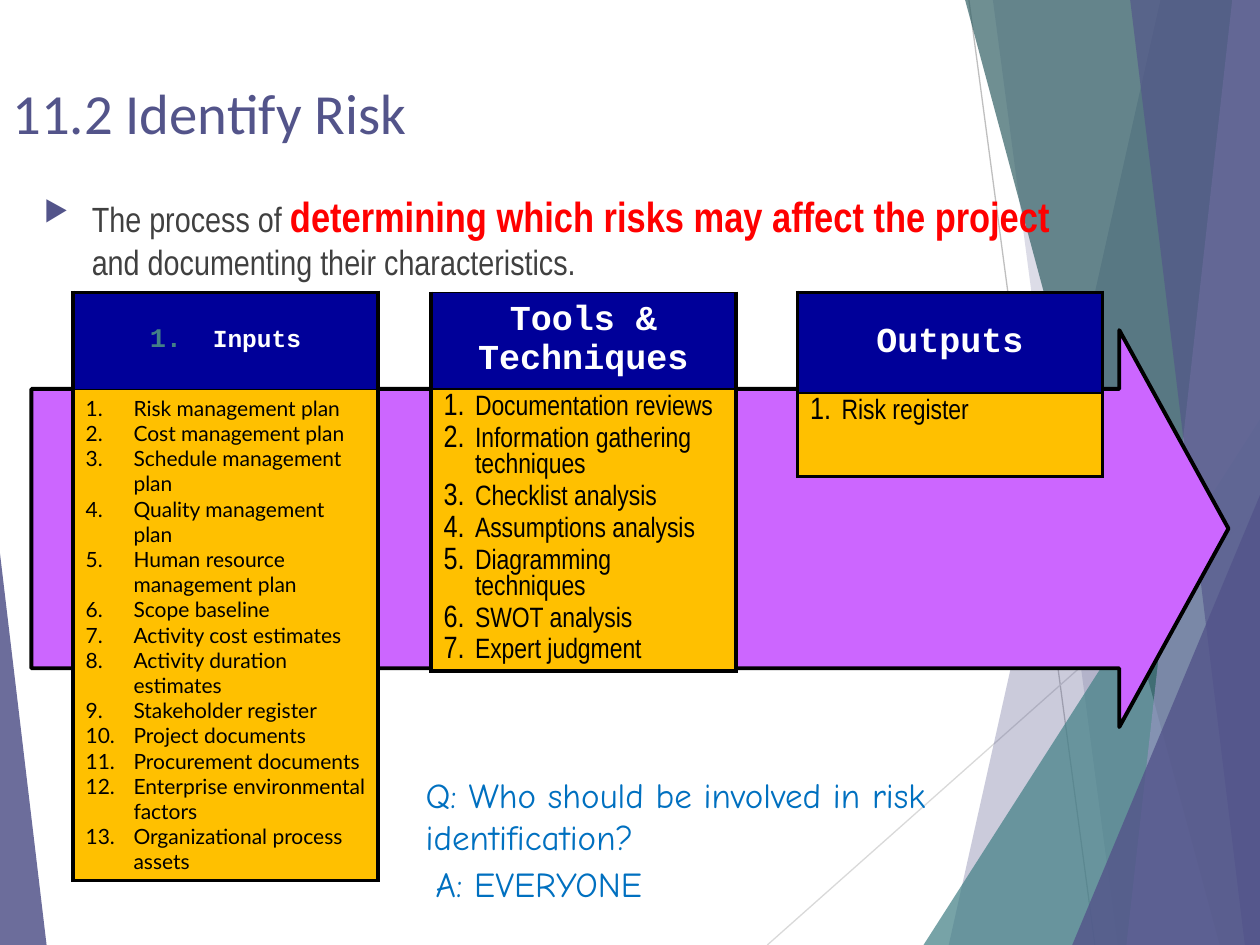
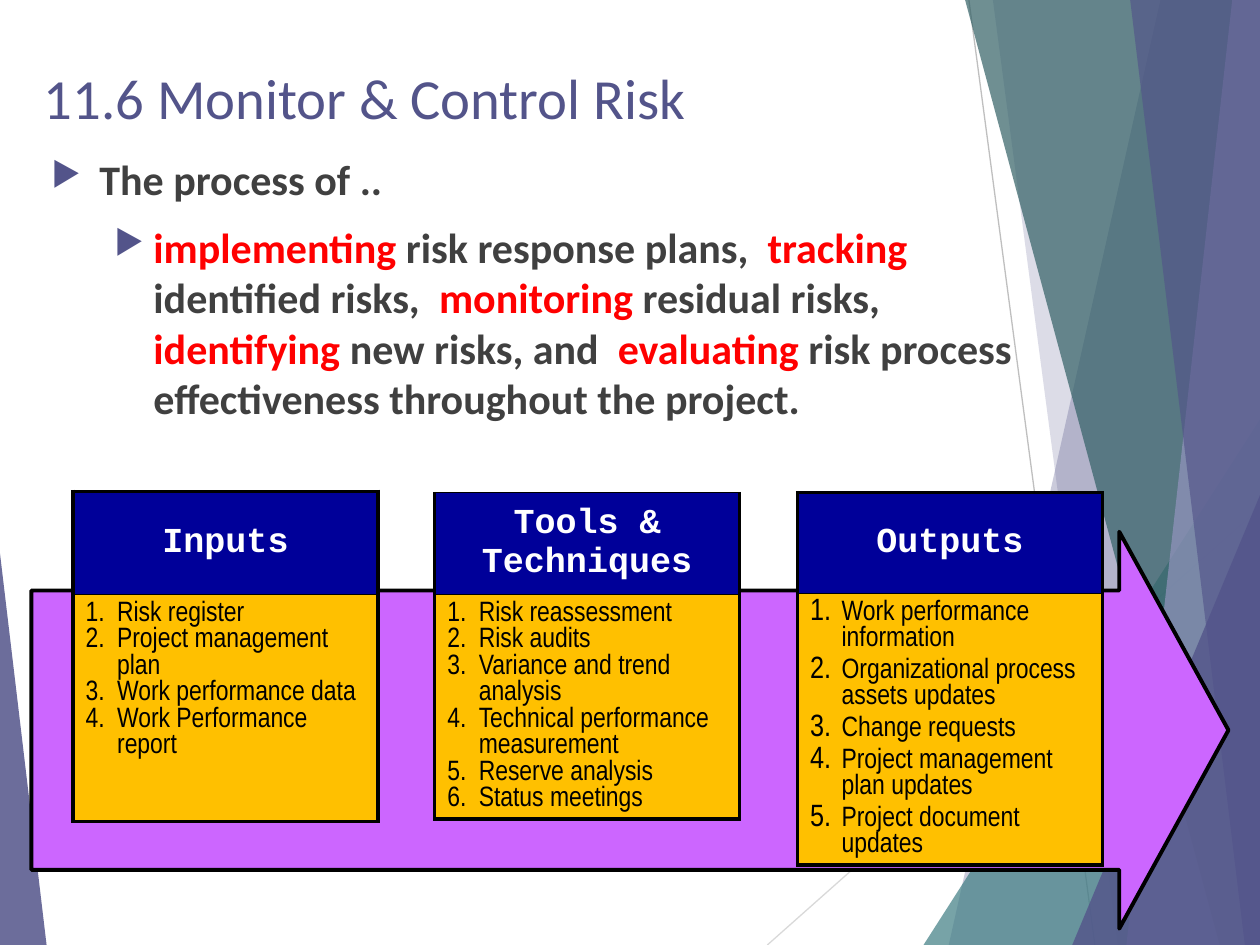
from lxml.etree import SubElement
from pptx import Presentation
from pptx.dml.color import RGBColor
from pptx.enum.shapes import MSO_CONNECTOR, MSO_SHAPE
from pptx.enum.text import MSO_ANCHOR, PP_ALIGN
from pptx.oxml.ns import qn
from pptx.util import Inches, Pt

# Colours
PLUM = RGBColor(0x53, 0x54, 0x8A)
LILAC = RGBColor(0x93, 0x94, 0xBE)
TEAL = RGBColor(0x43, 0x80, 0x86)
PINE = RGBColor(0x32, 0x60, 0x65)
SILVER = RGBColor(0xBF, 0xBF, 0xBF)
MIST = RGBColor(0xD9, 0xD9, 0xD9)
GREY = RGBColor(0x40, 0x40, 0x40)
RED = RGBColor(0xFF, 0x00, 0x00)
BLUE = RGBColor(0x00, 0x70, 0xC0)
NAVY = RGBColor(0x00, 0x00, 0x99)
GOLD = RGBColor(0xFF, 0xC0, 0x00)
VIOLET = RGBColor(0xCC, 0x66, 0xFF)
BLACK = RGBColor(0, 0, 0)
WHITE = RGBColor(0xFF, 0xFF, 0xFF)

# Text formats
TITLE = {"name": "Calibri", "size": Pt(32.4)}
PLAIN = {"name": "Arial Narrow", "size": Pt(20)}
STRONG = {"name": "Arial Narrow", "size": Pt(24), "bold": True}
BOLD = {"name": "Calibri", "size": Pt(24), "bold": True}
HEAD = {"name": "Courier New", "size": Pt(20), "bold": True}
SMALL = {"name": "Courier New", "size": Pt(14), "bold": True}
NARROW = {"name": "Arial Narrow", "size": Pt(16), "bold": False}
LATO = {"name": "Lato", "size": Pt(12), "bold": False}
COMIC = {"name": "Comic Neue", "size": Pt(20)}

# List formats: font, indent, space before, line height, number size
TIGHT = (NARROW, 0.25, 0, Pt(15.1), 100)
LOOSE = (NARROW, 0.25, 3, Pt(15.1), 110)
LONG = (LATO, 0.38, 0, 1.0, 100)

WIDE, HIGH = 10, 7.5
COL = 2.42


def write(par, *runs):
    """Add runs of (text, format, colour) to a paragraph."""
    for text, form, tint in runs:
        run = par.add_run()
        run.text = text
        for key, val in form.items():
            setattr(run.font, key, val)
        run.font.color.rgb = tint


def mark(par, left, hang, size, tint=None, char=None):
    """Give a paragraph a bullet, or a number when char is None."""
    props = par._p.get_or_add_pPr()
    props.set("marL", str(Inches(left)))
    props.set("indent", str(-Inches(hang)))
    if tint is not None:
        SubElement(SubElement(props, qn("a:buClr")), qn("a:srgbClr"), val=str(tint))
    SubElement(props, qn("a:buSzPct"), val=str(size * 1000))
    if char:
        SubElement(props, qn("a:buChar"), char=char)
    else:
        SubElement(props, qn("a:buAutoNum"), type="arabicPeriod")


deck = Presentation()
deck.slide_width, deck.slide_height = Inches(WIDE), Inches(HIGH)
blank = deck.slide_layouts[6]
pages = [deck.slides.add_slide(blank) for _ in range(2)]
draw = pages[0].shapes

# Shared backdrop: thin lines, then slabs and corner triangles, kept on the layout
decor = []
for x1, y1, x2, y2, tint in [(7.69, 0, 8.69, HIGH, SILVER), (WIDE, 4.03, 6.09, HIGH, MIST)]:
    ray = draw.add_connector(MSO_CONNECTOR.STRAIGHT, *map(Inches, (x1, y1, x2, y2)))
    ray.line.color.rgb, ray.line.width = tint, Pt(0.75)
    SubElement(ray._element.spPr, qn("a:effectLst"))
    decor.append(ray)

# Slab: top x, foot x. Corner: left, top, width, tip.
for kind, place, tint, alpha in [
    ("slab", (9.21, 7.53), PLUM, 30),
    ("slab", (7.88, 8.87), PLUM, 20),
    ("corner", (7.33, 3.33, 2.67, 1), TEAL, 72),
    ("slab", (7.66, 9.68), PINE, 70),
    ("slab", (9.78, 8.94), LILAC, 70),
    ("slab", (8.97, 9.88), PLUM, 65),
    ("corner", (8.51, 3.93, 1.49, 1), PLUM, 80),
    ("corner", (0, 4.39, 0.37, 0), PLUM, 85),
]:
    if kind == "slab":
        top, foot = place
        pen = draw.build_freeform(Inches(top), 0)
        pen.add_line_segments([(Inches(x), Inches(y)) for x, y in
                               [(WIDE, 0), (WIDE, HIGH), (foot, HIGH)]])
        shape = pen.convert_to_shape()
    else:
        left, top, width, tip = place
        shape = draw.add_shape(MSO_SHAPE.ISOSCELES_TRIANGLE,
                               *map(Inches, (left, top, width, HIGH - top)))
        shape.adjustments[0] = tip
    shape.fill.solid()
    shape.fill.fore_color.rgb = tint
    clr = next(shape._element.spPr.iter(qn("a:srgbClr")))
    SubElement(clr, qn("a:alpha"), val=str(alpha * 1000))
    shape.line.fill.background()
    shape.shadow.inherit = False
    decor.append(shape)
for item in decor:
    blank.shapes.element.append(item._element)

# Page content: title, body paragraphs of (level, runs), arrow top, tables
# Table: left, top, head height, body height, heading, list format, items
parts = [
    {
        "title": (0, 0.54, "11.2 Identify Risk"),
        "body": (0.25, 1.46, 0.83, [
            (0, [("The process of ", PLAIN, GREY),
                 ("determining which risks may affect the project ", STRONG, RED),
                 ("and documenting their characteristics.", PLAIN, GREY)]),
        ]),
        "arrow": 2.62,
        "tables": [
            (0.58, 2.32, 0.77, 3.9, "Inputs", LONG, [
                "Risk management plan", "Cost management plan",
                "Schedule management plan", "Quality management plan",
                "Human resource management plan", "Scope baseline",
                "Activity cost estimates", "Activity duration estimates",
                "Stakeholder register", "Project documents",
                "Procurement documents", "Enterprise environmental factors",
                "Organizational process assets"]),
            (3.42, 2.32, 0.73, 2.23, "Tools & Techniques", LOOSE, [
                "Documentation reviews", "Information gathering techniques",
                "Checklist analysis", "Assumptions analysis",
                "Diagramming techniques", "SWOT analysis", "Expert judgment"]),
            (6.33, 2.32, 0.8, 0.66, "Outputs", LOOSE, ["Risk register"]),
        ],
        "notes": [(3.28, 6.09, "Q: Who should be involved in risk identification?"),
                  (3.36, 6.8, "A: EVERYONE")],
    },
    {
        "title": (0.25, 0.42, "11.6 Monitor & Control Risk"),
        "body": (0.31, 1.17, 2.25, [
            (0, [("The process of ..", BOLD, GREY)]),
            (1, [("implementing", BOLD, RED), (" risk response plans,  ", BOLD, GREY),
                 ("tracking", BOLD, RED), (" identified risks,  ", BOLD, GREY),
                 ("monitoring", BOLD, RED), (" residual risks,  ", BOLD, GREY),
                 ("identifying", BOLD, RED), (" new risks, and  ", BOLD, GREY),
                 ("evaluating", BOLD, RED),
                 (" risk process effectiveness throughout the project.", BOLD, GREY)]),
        ]),
        "arrow": 4.22,
        "tables": [
            (0.58, 3.9, 0.82, 1.8, "Inputs", TIGHT, [
                "Risk register", "Project management plan",
                "Work performance data", "Work Performance report"]),
            (3.45, 3.91, 0.81, 1.77, "Tools & Techniques", TIGHT, [
                "Risk reassessment", "Risk audits", "Variance and trend analysis",
                "Technical performance measurement", "Reserve analysis",
                "Status meetings"]),
            (6.33, 3.91, 0.8, 2.15, "Outputs", LOOSE, [
                "Work performance information",
                "Organizational process assets updates", "Change requests",
                "Project management plan updates", "Project document updates"]),
        ],
        "notes": [],
    },
]

for page, part in zip(pages, parts):
    draw = page.shapes

    # Title
    left, top, text = part["title"]
    frame = draw.add_textbox(*map(Inches, (left, top, WIDE / 1.2, 0.5))).text_frame
    frame.word_wrap = True
    frame.margin_top = Inches(0.08)
    write(frame.paragraphs[0], (text, TITLE, PLUM))

    # Body
    left, top, height, lines = part["body"]
    frame = draw.add_textbox(*map(Inches, (left, top, WIDE / 1.2, height))).text_frame
    frame.word_wrap = True
    for row, (level, runs) in enumerate(lines):
        par = frame.add_paragraph() if row else frame.paragraphs[0]
        par.level, par.space_before = level, Pt(10)
        write(par, *runs)
        mark(par, *[(0.38, 0.38), (0.81, 0.31)][level], 80, PLUM, "▶")

    # Arrow behind the tables
    arrow = draw.add_shape(MSO_SHAPE.RIGHT_ARROW,
                           *map(Inches, (0.25, part["arrow"], 0.95 * WIDE, 0.42 * HIGH)))
    arrow.adjustments[0], arrow.adjustments[1] = 0.704, 0.275
    arrow.fill.solid()
    arrow.fill.fore_color.rgb = VIOLET
    arrow.line.color.rgb, arrow.line.width = BLACK, Pt(2.25)
    arrow.shadow.inherit = False

    # Tables
    for left, top, head, body, name, style, items in part["tables"]:
        grid = draw.add_table(2, 1, *map(Inches, (left, top, COL, head + body))).table
        grid.first_row = grid.horz_banding = False
        grid.rows[0].height, grid.rows[1].height = Inches(head), Inches(body)
        cap, box = grid.cell(0, 0), grid.cell(1, 0)

        # Borders come before the fill in a cell's properties
        rim = 1 if name.startswith("Tools") else 2.25
        for cell, tint, upper, lower in [(cap, NAVY, rim, 1), (box, GOLD, 1, 2.25)]:
            props = cell._tc.get_or_add_tcPr()
            for side, width in zip("LRTB", (2.25, 2.25, upper, lower)):
                edge = SubElement(props, qn("a:ln" + side), w=str(Pt(width)))
                fill = SubElement(edge, qn("a:solidFill"))
                SubElement(fill, qn("a:srgbClr"), val=str(BLACK))
            cell.fill.solid()
            cell.fill.fore_color.rgb = tint

        # Heading
        cap.vertical_anchor = MSO_ANCHOR.MIDDLE
        par = cap.text_frame.paragraphs[0]
        par.alignment = PP_ALIGN.CENTER
        write(par, (name, SMALL if style is LONG else HEAD, WHITE))
        if style is LONG:
            mark(par, 0.5, 0.5, 110, TEAL)

        # Numbered list
        font, hang, gap, pitch, size = style
        for row, item in enumerate(items):
            par = box.text_frame.add_paragraph() if row else box.text_frame.paragraphs[0]
            par.space_before, par.line_spacing = Pt(gap), pitch
            write(par, (item, font, BLACK))
            mark(par, hang, hang, size)

    # Question and answer
    for left, top, text in part["notes"]:
        frame = draw.add_textbox(*map(Inches, (left, top, 5.42, 0.44))).text_frame
        frame.word_wrap = True
        write(frame.paragraphs[0], (text, COMIC, BLUE))

deck.save("out.pptx")
